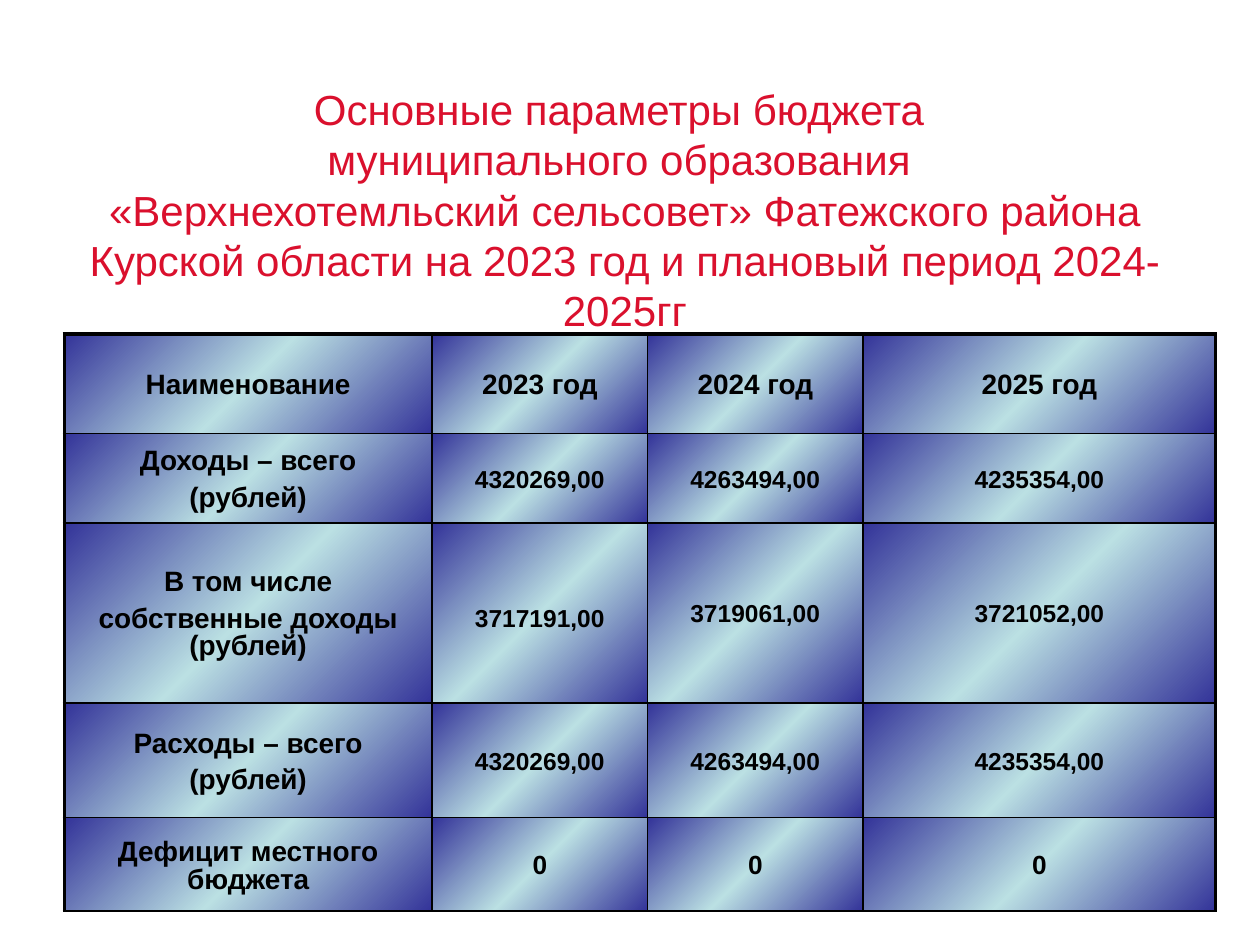
from lxml.etree import SubElement
from pptx import Presentation
from pptx.dml.color import RGBColor
from pptx.enum.text import MSO_ANCHOR as Anchor, MSO_AUTO_SIZE as AutoSize, PP_ALIGN as Align
from pptx.oxml.ns import qn
from pptx.util import Inches, Pt

RED = RGBColor(0xDA, 0x10, 0x2D)
BLACK = RGBColor(0, 0, 0)
INDIGO = RGBColor(0x33, 0x33, 0x99)
PALE_BLUE = RGBColor(0xBB, 0xE0, 0xE3)

FONT = "Arial"
OUTER_BORDER, INNER_BORDER = Pt(2.15), Pt(0.91)
LABEL_SIZE, AMOUNT_SIZE, ZERO_SIZE = 16, 14, 15

TITLE = ("Основные параметры бюджета \vмуниципального образования \v"
         "«Верхнехотемльский сельсовет» Фатежского района Курской области "
         "на 2023 год и плановый период 2024-2025гг")

COLUMN_WIDTHS = [2.92, 1.71, 1.71, 2.8]
ROW_HEIGHTS = [0.79, 0.71, 1.43, 0.91, 0.74]
# Size of the figures in each row, then the row's texts
BUDGET = [
    (LABEL_SIZE, ["Наименование", "2023 год", "2024 год", "2025 год"]),
    (AMOUNT_SIZE, ["Доходы – всего\n(рублей)", "4320269,00", "4263494,00", "4235354,00"]),
    (AMOUNT_SIZE, ["В том числе\nсобственные доходы (рублей)",
                   "3717191,00", "3719061,00", "3721052,00"]),
    (AMOUNT_SIZE, ["Расходы – всего\n(рублей)", "4320269,00", "4263494,00", "4235354,00"]),
    (ZERO_SIZE, ["Дефицит местного бюджета", "0", "0", "0"]),
]


def add_color(parent, color):
    SubElement(parent, qn("a:srgbClr"), val=str(color))


def set_borders(cell, widths):
    """Draw black borders; widths maps L, R, T and B, in that order."""
    properties = cell._tc.get_or_add_tcPr()
    for side, width in widths.items():
        line = SubElement(properties, qn(f"a:ln{side}"), w=str(int(width)))
        add_color(SubElement(line, qn("a:solidFill")), BLACK)


def set_gradient(cell):
    gradient = SubElement(cell._tc.get_or_add_tcPr(), qn("a:gradFill"), rotWithShape="1")
    stops = SubElement(gradient, qn("a:gsLst"))
    for percent, color in [(0, INDIGO), (50, PALE_BLUE), (100, INDIGO)]:
        add_color(SubElement(stops, qn("a:gs"), pos=str(percent * 1000)), color)
    SubElement(gradient, qn("a:lin"), ang=str(45 * 60000), scaled="1")


def set_font(paragraph, size, color, bold=False):
    paragraph.alignment = Align.CENTER
    font = paragraph.font
    font.name, font.size, font.bold = FONT, Pt(size), bold
    font.color.rgb = color


def fill_cell(cell, text, size, space_before):
    cell.text = text
    cell.vertical_anchor = Anchor.MIDDLE
    cell.margin_top = Inches(0.09)
    for paragraph in cell.text_frame.paragraphs:
        set_font(paragraph, size, BLACK, bold=True)
        paragraph.line_spacing = 0.9
        paragraph.space_before = Pt(space_before)


def add_title(slide):
    title = slide.shapes.title
    title.left, title.top, title.width, title.height = map(Inches, (0.43, 0.52, 9.06, 1.65))
    frame = title.text_frame
    frame.text = TITLE
    frame.word_wrap = True
    frame.auto_size = AutoSize.NONE
    frame.vertical_anchor = Anchor.TOP
    frame.margin_top = Inches(0.14)
    set_font(frame.paragraphs[0], 24, RED)


def add_budget_table(slide):
    table = slide.shapes.add_table(
        len(ROW_HEIGHTS), len(COLUMN_WIDTHS), Inches(0.51), Inches(2.65),
        Inches(sum(COLUMN_WIDTHS)), Inches(sum(ROW_HEIGHTS))).table
    table.first_row = table.horz_banding = False
    for column, width in zip(table.columns, COLUMN_WIDTHS):
        column.width = Inches(width)
    for row, height in zip(table.rows, ROW_HEIGHTS):
        row.height = Inches(height)

    last = len(COLUMN_WIDTHS) - 1
    for r, (figure_size, texts) in enumerate(BUDGET):
        for c, text in enumerate(texts):
            cell = table.cell(r, c)
            if c == 0:
                fill_cell(cell, text, LABEL_SIZE, space_before=4.8)
            else:
                fill_cell(cell, text, figure_size, space_before=4.5)
            set_borders(cell, {
                "L": OUTER_BORDER if c == 0 else INNER_BORDER,
                "R": OUTER_BORDER if c == last else INNER_BORDER,
                "T": OUTER_BORDER if r == 0 else INNER_BORDER,
                "B": INNER_BORDER,
            })
            set_gradient(cell)
    # The 2023 own-income figure sits slightly lower than its neighbours
    table.cell(2, 1).margin_top = Inches(0.17)


def main():
    deck = Presentation()
    deck.slide_width, deck.slide_height = Inches(10), Inches(7.5)
    slide = deck.slides.add_slide(deck.slide_layouts.get_by_name("Title Only"))
    add_title(slide)
    add_budget_table(slide)
    deck.save("out.pptx")


if __name__ == "__main__":
    main()
